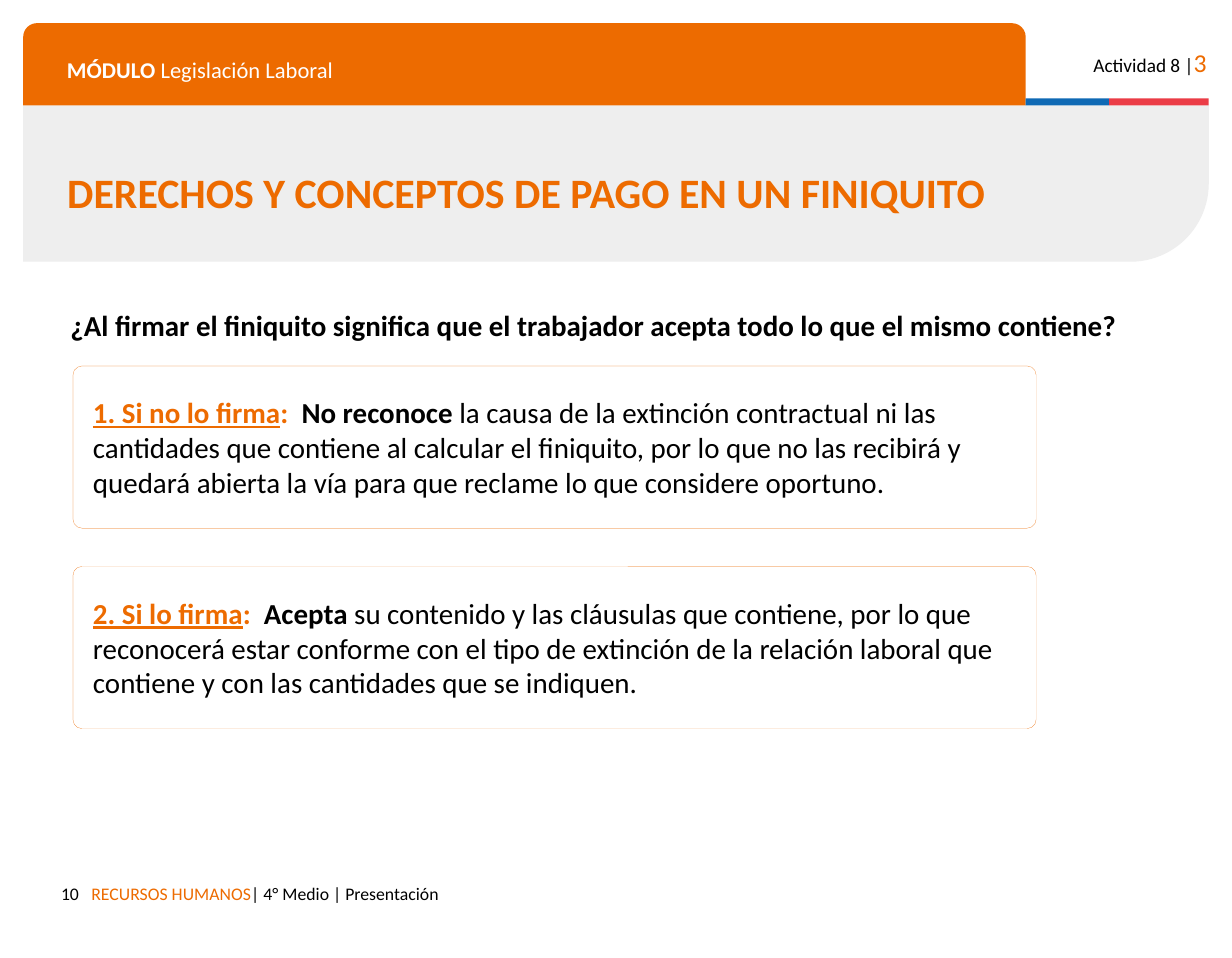
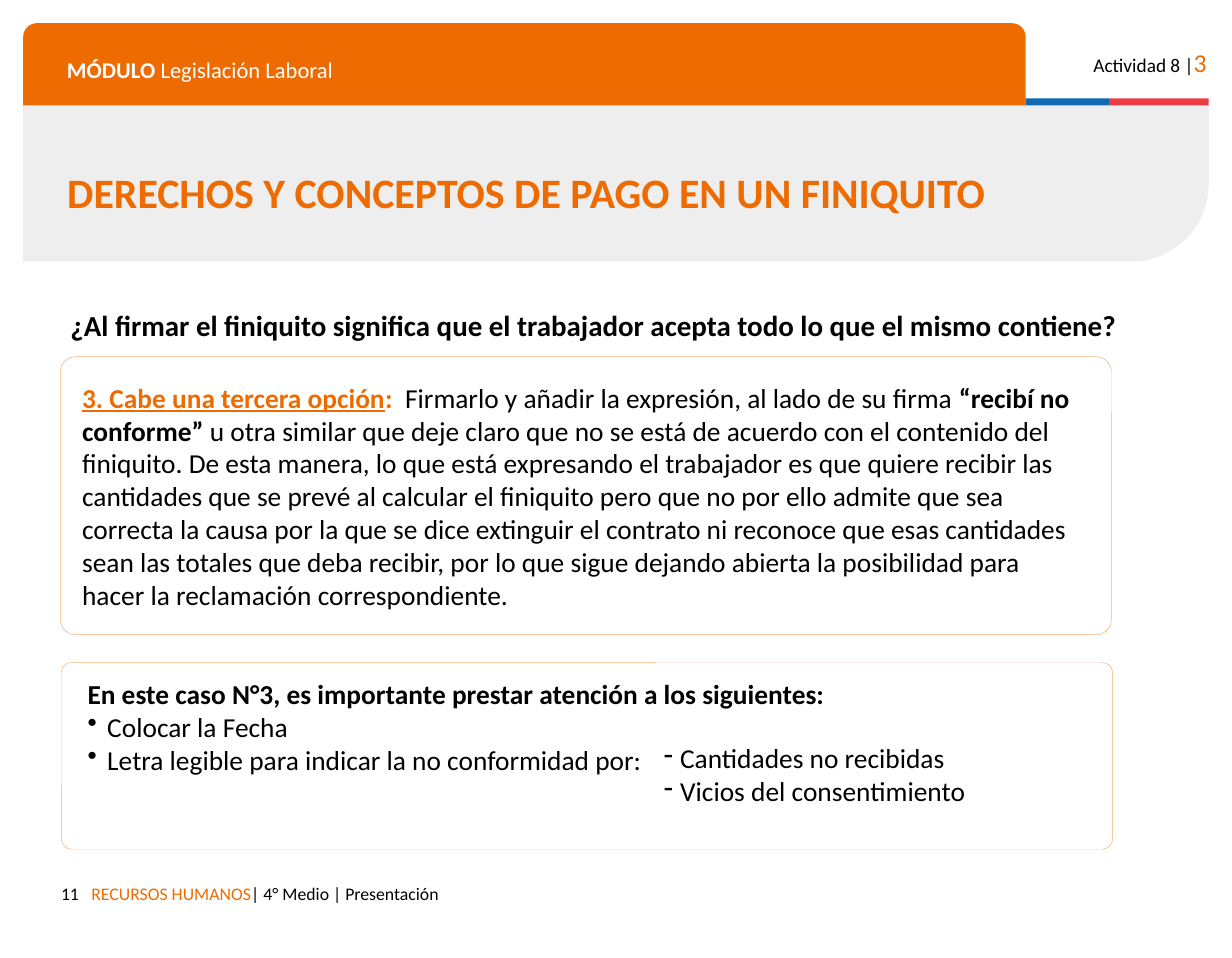
from dataclasses import dataclass

from lxml import etree
from pptx import Presentation
from pptx import util as u
from pptx.dml.color import RGBColor
from pptx.enum import shapes, text
from pptx.oxml.ns import qn

UNIT = 0.1


@dataclass(frozen=True)
class Theme:
    font: str = "Calibri"
    orange: str = "ED6B00"
    gray: str = "EEEEEE"
    blue: str = "0F69B4"
    red: str = "EB3C46"
    white: str = "FFFFFF"
    black: str = "000000"
    title: int = 26
    question: int = 18
    detail: int = 17
    page: int = 16
    module: int = 14
    activity: int = 12
    footer: int = 11


T = Theme()


@dataclass(frozen=True)
class Box:
    x: float
    y: float
    w: float
    h: float

    def at(self, x, y, w, h):
        return Box(self.x + x, self.y + y, w, h)

    def emu(self):
        return [u.Inches(v * UNIT) for v in (self.x, self.y, self.w, self.h)]


PAGE = Box(0, 0, 106.3, 82.7)
HEADER = PAGE.at(2, 2, 102.3, 20.6)
FOOTER = PAGE.at(2, 75.3, 80, 3.8)


@dataclass(frozen=True)
class Run:
    words: str
    size: int
    color: str = T.black
    bold: bool = False
    underline: bool = False


def add_runs(p, runs):
    for run in runs:
        r = p.add_run()
        r.text = run.words
        r.font.name = T.font
        r.font.size = u.Pt(run.size)
        r.font.bold = run.bold
        r.font.underline = run.underline
        r.font.color.rgb = RGBColor.from_string(run.color)


def set_insets(tf, left, top, right, bottom):
    tf.margin_left, tf.margin_top = u.Inches(left), u.Inches(top)
    tf.margin_right, tf.margin_bottom = u.Inches(right), u.Inches(bottom)


def set_bullet(p, char, indent):
    pPr = p._p.get_or_add_pPr()
    pPr.set("marL", str(u.Inches(indent)))
    pPr.set("indent", str(-u.Inches(indent)))
    etree.SubElement(pPr, qn("a:buChar")).set("char", char)


def add_label(s, box, runs, align=text.PP_ALIGN.LEFT, inset=0.1):
    tf = s.shapes.add_textbox(*box.emu()).text_frame
    tf.word_wrap = True
    set_insets(tf, 0.1, inset, 0.1, inset)
    tf.paragraphs[0].alignment = align
    add_runs(tf.paragraphs[0], runs)
    return tf


def add_list(tf, char, indent, items, new=True):
    for i, item in enumerate(items):
        p = tf.add_paragraph() if new or i else tf.paragraphs[0]
        p.alignment = text.PP_ALIGN.LEFT
        set_bullet(p, char, indent)
        add_runs(p, [Run(item, T.detail)])


def add_panel(s, kind, box, fill):
    sp = s.shapes.add_shape(kind, *box.emu())
    sp.shadow.inherit = False
    sp.fill.solid()
    sp.fill.fore_color.rgb = RGBColor.from_string(fill)
    sp.line.fill.background()
    return sp


def add_header(s, box):
    kinds = shapes.MSO_SHAPE
    band = add_panel(s, kinds.ROUND_1_RECTANGLE, box.at(0, 7.1, box.w, 13.5), T.gray)
    band.adjustments[0] = 0.5
    band.element.spPr.xfrm.set("flipV", "1")
    add_panel(s, kinds.ROUND_2_SAME_RECTANGLE, box.at(0, 0, 86.5, 7.1), T.orange)
    add_panel(s, kinds.RECTANGLE, box.at(86.5, 6.5, 7.2, 0.6), T.blue)
    add_panel(s, kinds.RECTANGLE, box.at(93.7, 6.5, 8.6, 0.6), T.red)
    add_label(s, box.at(2.8, 1.8, 81.4, 3.5), [
        Run("MÓDULO ", T.module, T.white, True),
        Run("Legislación Laboral", T.module, T.white)])
    add_label(s, box.at(90.3, 1, 12.8, 3.8), [
        Run("Actividad 8 |", T.activity),
        Run("3", T.page, T.orange)], text.PP_ALIGN.RIGHT)


def add_footer(s, box):
    add_label(s, box.at(4.9, 0, 70, box.h), [
        Run("RECURSOS HUMANOS", T.footer, T.orange),
        Run("| 4° Medio | Presentación", T.footer)])


def build_layout(prs):
    layout = prs.slide_layouts[5]
    s = prs.slides.add_slide(layout)
    add_header(s, HEADER)
    add_footer(s, FOOTER)
    parts = [sp for sp in s.shapes if not sp.is_placeholder]
    for i, sp in enumerate(parts):
        sp.element.nvSpPr.cNvPr.set("id", str(100 + i))
        layout.element.cSld.spTree.append(sp.element)
    return layout, s


def add_opening(s, number):
    title = s.shapes.title
    title.left, title.top, title.width, title.height = HEADER.at(2.8, 12.4, 92, 5).emu()
    tf = title.text_frame
    tf.word_wrap = True
    tf.auto_size = text.MSO_AUTO_SIZE.NONE
    tf.vertical_anchor = text.MSO_ANCHOR.TOP
    p = tf.paragraphs[0]
    p.alignment = text.PP_ALIGN.LEFT
    p.line_spacing = 0.9
    add_runs(p, [Run("DERECHOS Y CONCEPTOS DE PAGO EN UN FINIQUITO", T.title, T.orange, True)])
    add_label(s, PAGE.at(5.1, 26.1, 94.8, 4), [
        Run("¿Al firmar el finiquito significa que el trabajador acepta todo lo que "
            "el mismo contiene?", T.question, bold=True)], inset=0.05)
    add_label(s, FOOTER.at(0, 0, 5.8, 2.9), [Run(str(number), T.footer)], text.PP_ALIGN.RIGHT)


def add_card(s, box, runs, anchor=text.MSO_ANCHOR.MIDDLE, left=0.15, top=0.05):
    sp = s.shapes.add_shape(shapes.MSO_SHAPE.ROUNDED_RECTANGLE, *box.emu())
    sp.adjustments[0] = 0.055
    sp.shadow.inherit = False
    sp.fill.background()
    sp.line.color.rgb = RGBColor.from_string(T.orange)
    sp.line.width = u.Pt(0.1)
    tf = sp.text_frame
    tf.word_wrap = True
    tf.vertical_anchor = anchor
    set_insets(tf, left, top, 0.25, 0.05)
    tf.paragraphs[0].alignment = text.PP_ALIGN.LEFT
    add_runs(tf.paragraphs[0], runs)
    return tf


def option_lead(words, size):
    return [Run(words, size, T.orange, True, True), Run(":  ", size, T.orange, True)]


def fill_two_options(s, box):
    options = [
        ("1. Si no lo firma", "No reconoce ",
         "la causa de la extinción contractual ni las cantidades que contiene al calcular "
         "el finiquito, por lo que no las recibirá y quedará abierta la vía para que "
         "reclame lo que considere oportuno."),
        ("2. Si lo firma", "Acepta ",
         "su contenido y las cláusulas que contiene, por lo que reconocerá estar conforme "
         "con el tipo de extinción de la relación laboral que contiene y con las "
         "cantidades que se indiquen."),
    ]
    for i, (lead, verb, rest) in enumerate(options):
        add_card(s, box.at(0, i * 17.3, box.w, 14), option_lead(lead, T.question) + [
            Run(verb, T.question, bold=True), Run(rest, T.question)])


def fill_third_option(s, box):
    add_card(s, box.at(0, 0, box.w, 24), option_lead("3. Cabe una tercera opción", T.detail) + [
        Run("Firmarlo y añadir la expresión, al lado de su firma ", T.detail),
        Run("“recibí no conforme” ", T.detail, bold=True),
        Run("u otra similar que deje claro que no se está de acuerdo con el contenido del "
            "finiquito. De esta manera, lo que está expresando el trabajador es que quiere "
            "recibir las cantidades que se prevé al calcular el finiquito pero que no por "
            "ello admite que sea correcta la causa por la que se dice extinguir el contrato "
            "ni reconoce que esas cantidades sean las totales que deba recibir, por lo que "
            "sigue dejando abierta la posibilidad para hacer la reclamación "
            "correspondiente.", T.detail)])
    advice = box.at(0.1, 26.4, box.w, 16.1)
    tf = add_card(s, advice, [
        Run("En este caso N°3, es importante prestar atención a los siguientes:",
            T.detail, bold=True)], text.MSO_ANCHOR.TOP, 0.2, 0.1)
    add_list(tf, "•", 0.17, [
        "Colocar la Fecha", "Letra legible para indicar la no conformidad por:"])
    tf = add_label(s, advice.at(51, 6.3, 32, 6.7), [], inset=0.05)
    add_list(tf, "-", 0.14, ["Cantidades no recibidas", "Vicios del consentimiento"], new=False)


def main():
    prs = Presentation()
    prs.slide_width, prs.slide_height = PAGE.emu()[2:]
    layout, first = build_layout(prs)
    second = prs.slides.add_slide(layout)
    for number, s in enumerate((first, second), 10):
        add_opening(s, number)
    fill_two_options(first, PAGE.at(6.3, 31.6, 83.1, 31.3))
    fill_third_option(second, PAGE.at(5.2, 30.8, 90.7, 42.5))
    prs.save("out.pptx")


if __name__ == "__main__":
    main()
